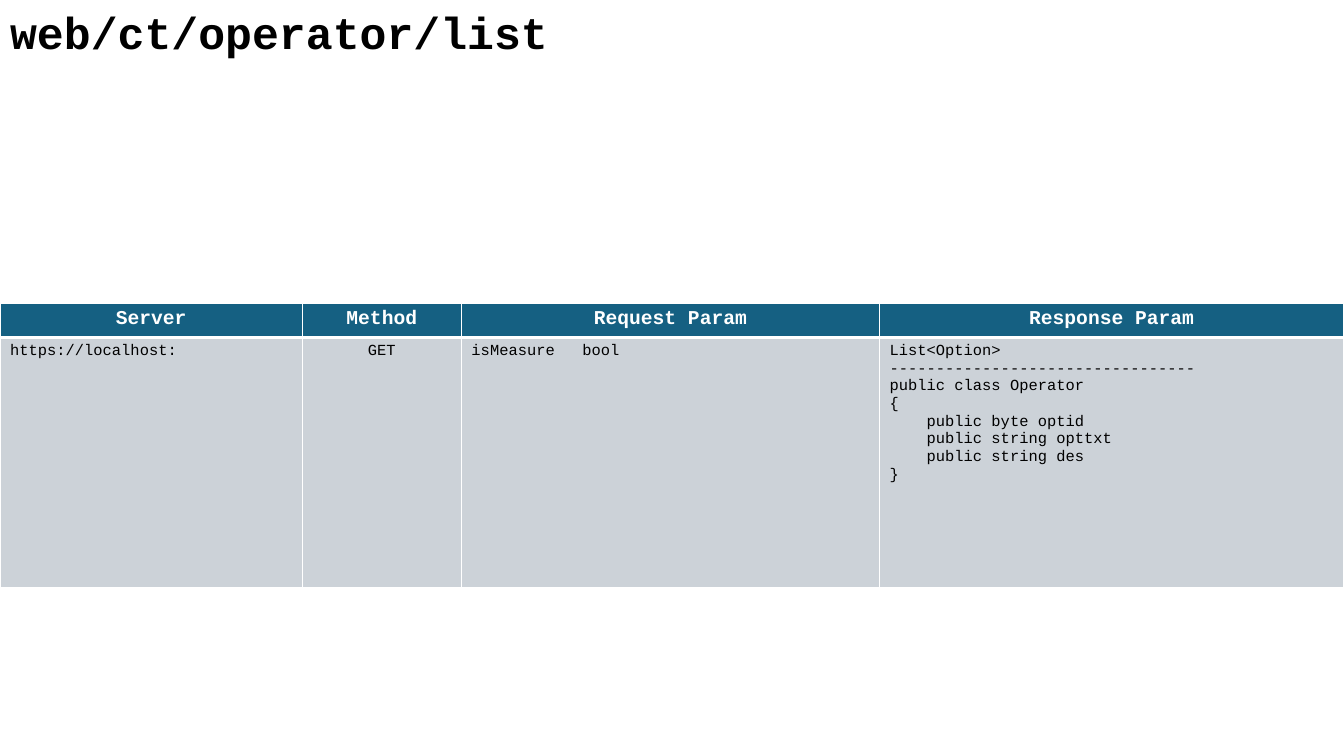
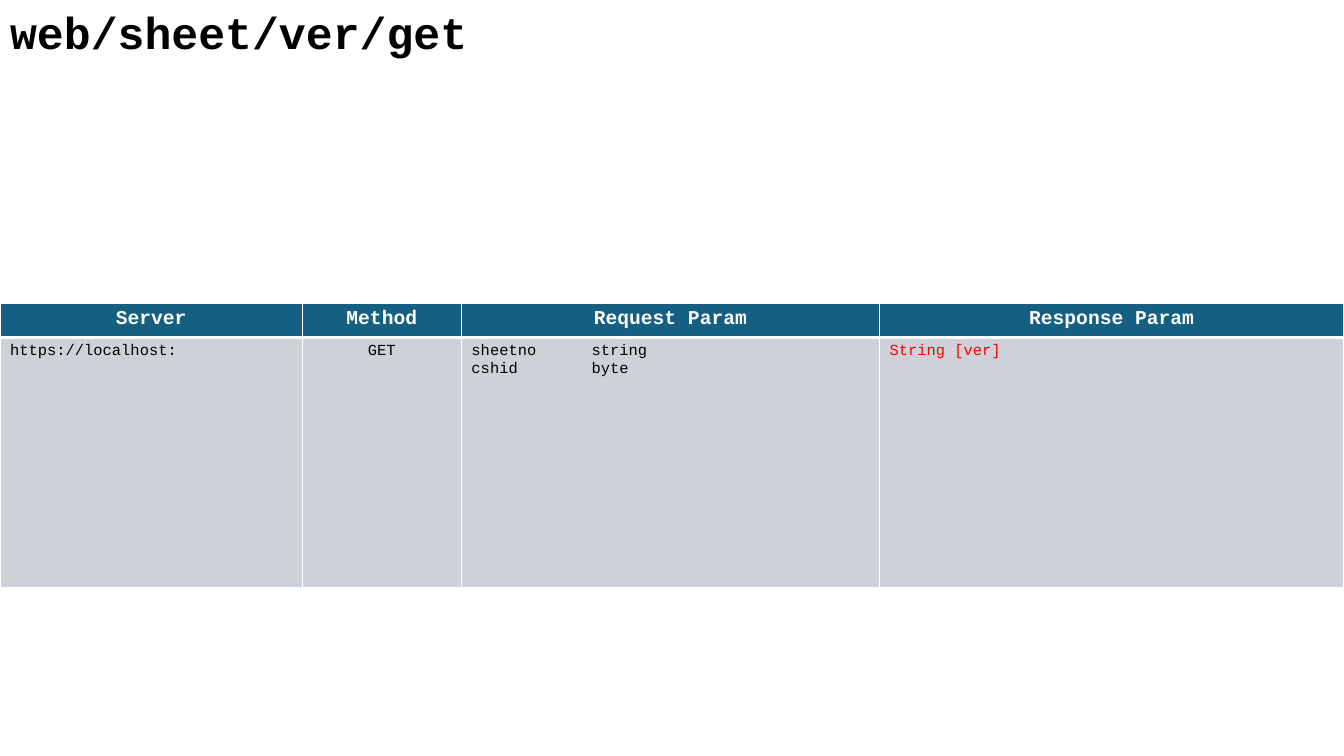
from dataclasses import dataclass

from lxml import etree
from pptx import Presentation
from pptx.dml.color import RGBColor
from pptx.enum.text import MSO_ANCHOR, MSO_AUTO_SIZE, PP_ALIGN
from pptx.oxml.ns import qn
from pptx.util import Inches, Pt

LEFT, CENTER = PP_ALIGN.LEFT, PP_ALIGN.CENTER
TOP = MSO_ANCHOR.TOP
NO_AUTOFIT = MSO_AUTO_SIZE.NONE
TITLE_ONLY = 5


@dataclass(frozen=True)
class Theme:
    font: str = "Courier New"
    ink: str = "000000"
    paper: str = "FFFFFF"
    header: str = "156082"
    body: str = "CCD2D8"
    alert: str = "FF0000"
    title_size: int = 32
    header_size: int = 14
    body_size: int = 11
    thin: int = 1
    thick: int = 3


THEME = Theme()
SLIDE_WIDTH, SLIDE_HEIGHT = 13.33, 7.5
TITLE_BOX = (0, 0, 9.45, 0.64)
TABLE_BOX = (0, 3.01, SLIDE_WIDTH, 2.82)
COLUMN_WEIGHTS = (3, 1.58, 4.15, 4.61)
HEADER_SHARE = 0.12
HEADINGS = ("Server", "Method", "Request Param", "Response Param")
SERVER = "https://localhost:"
CHARACTER_WIDTH = 0.6  # share of the type size in the fixed-width font

ENDPOINTS = (
    {
        "title": "web/ct/operator/list",
        "method": "GET",
        "request": ("isMeasure\tbool",),
        "type_column": 12,
        "response": (
            "List<Option>",
            "---------------------------------",
            "public class Operator",
            "{",
            "    public byte optid",
            "    public string opttxt",
            "    public string des",
            "}",
        ),
        "response_color": THEME.ink,
    },
    {
        "title": "web/sheet/ver/get",
        "method": "GET",
        "request": ("sheetno\tstring", "cshid\tbyte"),
        "type_column": 13,
        "response": ("String [ver]",),
        "response_color": THEME.alert,
    },
)


def write_text(frame, lines, size, color=THEME.ink, bold=False, align=LEFT, tab=None):
    """Write one paragraph per line; tab is a stop counted in characters."""
    frame.word_wrap = True
    for index, line in enumerate(lines):
        para = frame.paragraphs[0] if index == 0 else frame.add_paragraph()
        para.alignment = align
        if tab:
            stops = etree.SubElement(para._p.get_or_add_pPr(), qn("a:tabLst"))
            position = Pt(tab * size * CHARACTER_WIDTH)
            etree.SubElement(stops, qn("a:tab"), pos=str(position), algn="l")
        span = para.add_run()
        span.text = line
        span.font.name = THEME.font
        span.font.size = Pt(size)
        span.font.bold = bold
        span.font.color.rgb = RGBColor.from_string(color)


def style_cell(cell, fill, top, bottom):
    """Draw the cell's borders, widths in points, and then its fill."""
    properties = cell._tc.get_or_add_tcPr()
    widths = {"lnL": THEME.thin, "lnR": THEME.thin, "lnT": top, "lnB": bottom}
    for side, width in widths.items():
        line = etree.SubElement(properties, qn(f"a:{side}"), w=str(Pt(width)))
        solid = etree.SubElement(line, qn("a:solidFill"))
        etree.SubElement(solid, qn("a:srgbClr"), val=THEME.paper)
    cell.fill.solid()
    cell.fill.fore_color.rgb = RGBColor.from_string(fill)


def place_title(page, box, text):
    title = page.shapes.title
    title.left, title.top, title.width, title.height = map(Inches, box)
    frame = title.text_frame
    frame.auto_size = NO_AUTOFIT
    frame.vertical_anchor = TOP
    write_text(frame, [text], THEME.title_size, bold=True)


def place_endpoint_table(page, box, endpoint):
    width, height = box[2:]
    table = page.shapes.add_table(2, len(HEADINGS), *map(Inches, box)).table
    table.horz_banding = False
    for column, weight in zip(table.columns, COLUMN_WEIGHTS):
        column.width = Inches(width * weight / sum(COLUMN_WEIGHTS))
    for row, share in zip(table.rows, (HEADER_SHARE, 1 - HEADER_SHARE)):
        row.height = Inches(height * share)

    contents = (
        ([SERVER], {}),
        ([endpoint["method"]], {"align": CENTER}),
        (endpoint["request"], {"tab": endpoint["type_column"]}),
        (endpoint["response"], {"color": endpoint["response_color"]}),
    )
    for index, (heading, (lines, style)) in enumerate(zip(HEADINGS, contents)):
        head, body = table.cell(0, index), table.cell(1, index)
        style_cell(head, THEME.header, THEME.thin, THEME.thick)
        style_cell(body, THEME.body, THEME.thick, THEME.thin)
        write_text(head.text_frame, [heading], THEME.header_size,
                   color=THEME.paper, bold=True, align=CENTER)
        write_text(body.text_frame, lines, THEME.body_size, **style)


def add_endpoint_slide(deck, endpoint):
    page = deck.slides.add_slide(deck.slide_layouts[TITLE_ONLY])
    place_title(page, TITLE_BOX, endpoint["title"])
    place_endpoint_table(page, TABLE_BOX, endpoint)


def main():
    deck = Presentation()
    deck.slide_width, deck.slide_height = Inches(SLIDE_WIDTH), Inches(SLIDE_HEIGHT)
    for endpoint in ENDPOINTS:
        add_endpoint_slide(deck, endpoint)
    deck.save("out.pptx")


if __name__ == "__main__":
    main()
